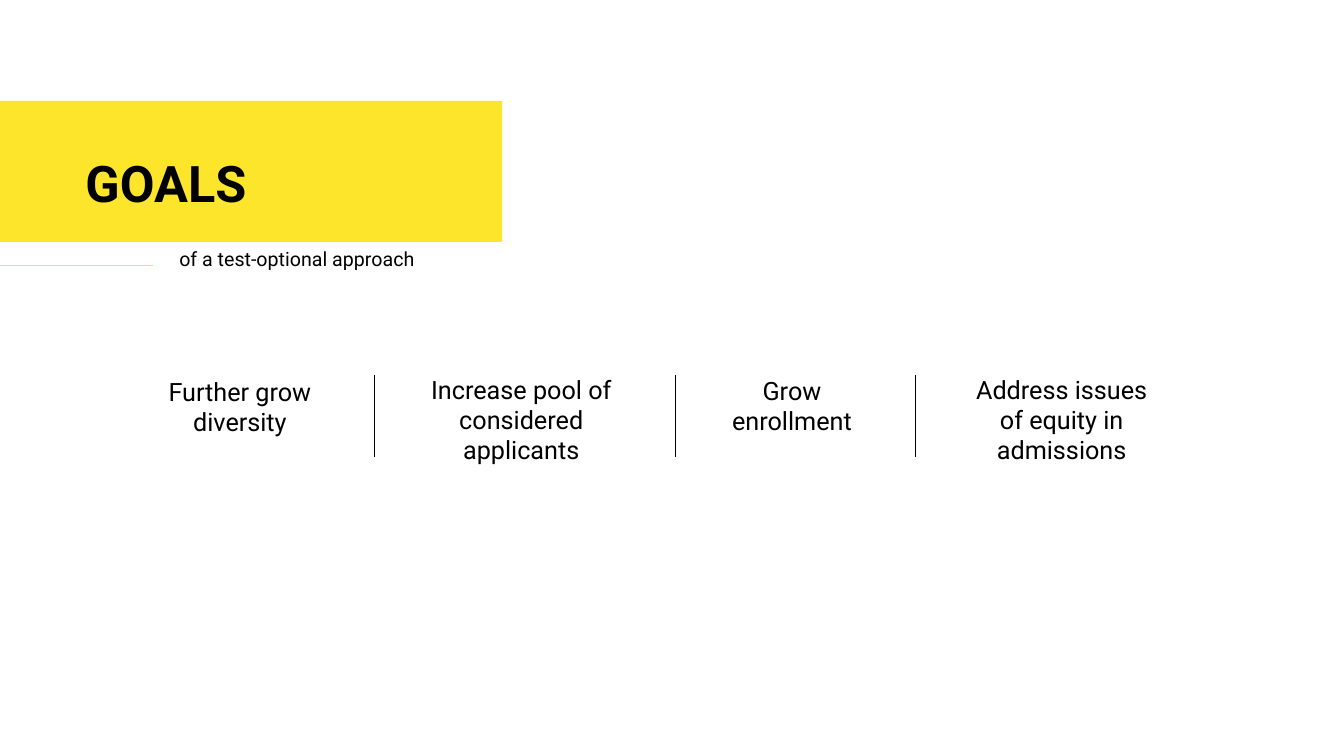
from dataclasses import dataclass

from pptx import Presentation
from pptx.dml.color import RGBColor
from pptx.enum.shapes import MSO_CONNECTOR, MSO_SHAPE
from pptx.enum.text import MSO_AUTO_SIZE, PP_ALIGN
from pptx.oxml.ns import qn
from pptx.util import Inches, Pt


@dataclass(frozen=True)
class Theme:
    font: str = "Roboto"
    ink: RGBColor = RGBColor(0x00, 0x00, 0x00)
    yellow: RGBColor = RGBColor(0xFD, 0xE5, 0x2B)
    title: Pt = Pt(36)
    goal: Pt = Pt(18)
    note: Pt = Pt(14)
    rule: Pt = Pt(0.5)


class Deck:
    def __init__(self, theme):
        self.theme = theme
        self.prs = Presentation()
        self.prs.slide_width = Inches(13.33)
        self.prs.slide_height = Inches(7.5)
        self.slide = self.prs.slides.add_slide(self.prs.slide_layouts[6])

    def text(self, words, box, size, align=PP_ALIGN.CENTER, bold=False):
        shape = self.slide.shapes.add_textbox(*map(Inches, box))
        frame = shape.text_frame
        frame.word_wrap = True
        frame.auto_size = MSO_AUTO_SIZE.SHAPE_TO_FIT_TEXT
        para = frame.paragraphs[0]
        para.text = words
        para.alignment = align
        para.font.name = self.theme.font
        para.font.size = size
        para.font.bold = bold
        para.font.color.rgb = self.theme.ink

    def band(self, box, color):
        shape = self.slide.shapes.add_shape(
            MSO_SHAPE.RECTANGLE, *map(Inches, box))
        shape.shadow.inherit = False
        shape.fill.solid()
        shape.fill.fore_color.rgb = color
        shape.line.fill.background()

    def line(self, start, end, color):
        rule = self.slide.shapes.add_connector(
            MSO_CONNECTOR.STRAIGHT, *map(Inches, start + end))
        rule.line.color.rgb = color
        rule.line.width = self.theme.rule
        props = rule._element.spPr
        props.append(props.makeelement(qn("a:effectLst"), {}))


def main():
    theme = Theme()
    deck = Deck(theme)

    # Goals: words, left, top, width, height
    goals = [
        ("Further grow diversity", 1.5, 3.68, 1.76, 1.01),
        ("Increase pool of considered applicants", 4.11, 3.66, 2.12, 1.31),
        ("Grow enrollment", 7.09, 3.67, 1.53, 1.01),
        ("Address issues of equity in admissions", 9.47, 3.66, 2.12, 1.31),
    ]
    for words, *box in goals:
        deck.text(words, box, theme.goal)

    # Heading band, title and subtitle
    deck.text("of a test-optional approach", (1.68, 2.4, 4.55, 0.64),
              theme.note, PP_ALIGN.LEFT)
    deck.band((0, 1, 4.98, 1.4), theme.yellow)
    deck.text("GOALS", (-2.88, 1.46, 9.05, 0.71), theme.title, bold=True)
    deck.line((0, 2.63), (1.52, 2.63), theme.yellow)

    # Dividers between goals
    for x in (3.71, 6.7, 9.08):
        deck.line((x, 3.72), (x, 4.53), theme.ink)

    deck.prs.save("out.pptx")


if __name__ == "__main__":
    main()
